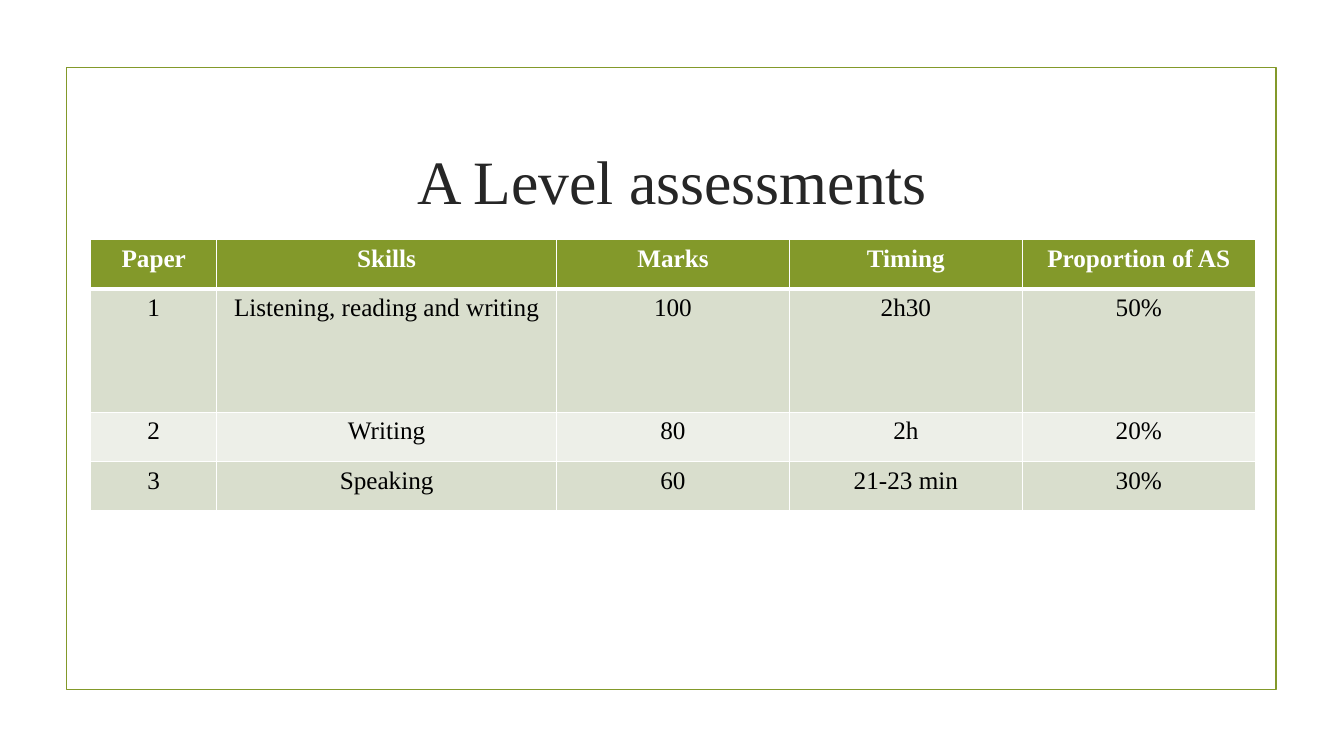
from lxml.etree import SubElement
from pptx import Presentation
from pptx.dml.color import RGBColor
from pptx.enum.shapes import MSO_SHAPE
from pptx.enum.text import MSO_ANCHOR, PP_ALIGN
from pptx.oxml.ns import qn
from pptx.util import Inches, Pt

COLORS = {
    "green": "83992A",
    "sage": "D9DECD",
    "pale": "EDEFE8",
    "white": "FFFFFF",
    "black": "000000",
    "title": "262626",
}
FONT = "Times New Roman"
ROWS = [
    ["Paper", "Skills", "Marks", "Timing", "Proportion of AS"],
    ["1", "Listening, reading and writing", "100", "2h30", "50%"],
    ["2", "Writing", "80", "2h", "20%"],
    ["3", "Speaking", "60", "21-23 min", "30%"],
]
WIDTHS = [1.25, 3.37, 2.31, 2.31, 2.31]
HEIGHTS = [0.49, 1.22, 0.49, 0.49]


def color(name):
    return RGBColor.from_string(COLORS[name])


def write(frame, text, size, ink, bold=False):
    """Put one centred line of text in a frame."""
    frame.text = text
    line = frame.paragraphs[0]
    line.alignment = PP_ALIGN.CENTER
    font = line.runs[0].font
    font.name, font.size, font.bold = FONT, Pt(size), bold
    font.color.rgb = color(ink)


def add_border(cell, side, width):
    edge = SubElement(cell._tc.get_or_add_tcPr(), qn(f"a:ln{side}"), w=str(Pt(width)))
    fill = SubElement(edge, qn("a:solidFill"))
    SubElement(fill, qn("a:srgbClr"), val=COLORS["white"])


def add_frame(slide, left, top, width, height):
    frame = slide.shapes.add_shape(
        MSO_SHAPE.RECTANGLE, Inches(left), Inches(top), Inches(width), Inches(height))
    frame.shadow.inherit = False
    frame.fill.background()
    frame.line.color.rgb = color("green")
    frame.line.width = Pt(1.25)


def add_title(slide, left, top, width, height):
    box = slide.shapes.add_textbox(
        Inches(left), Inches(top), Inches(width), Inches(height))
    frame = box.text_frame
    frame.word_wrap = True
    frame.vertical_anchor = MSO_ANCHOR.MIDDLE
    write(frame, "A Level assessments", 44, "title")


def add_grid(slide, left, top):
    """Draw the table of papers, with a thick rule under its header."""
    table = slide.shapes.add_table(
        len(ROWS), len(WIDTHS), Inches(left), Inches(top),
        Inches(sum(WIDTHS)), Inches(sum(HEIGHTS))).table
    for column, width in zip(table.columns, WIDTHS):
        column.width = Inches(width)
    for row, height in zip(table.rows, HEIGHTS):
        row.height = Inches(height)
    for r, texts in enumerate(ROWS):
        head = r == 0
        shade = "green" if head else "sage" if r % 2 else "pale"
        for c, text in enumerate(texts):
            cell = table.cell(r, c)
            write(cell.text_frame, text, 18, "white" if head else "black", head)
            for side in "LRTB":
                thick = (r, side) in [(0, "B"), (1, "T")]
                add_border(cell, side, 3 if thick else 1)
            cell.fill.solid()
            cell.fill.fore_color.rgb = color(shade)


def main():
    deck = Presentation()
    deck.slide_width, deck.slide_height = Inches(13.33), Inches(7.5)
    slide = deck.slides.add_slide(deck.slide_layouts[6])
    add_frame(slide, 0.66, 0.67, 12, 6.17)
    add_title(slide, 1.42, 1.07, 10.5, 1.43)
    add_grid(slide, 0.9, 2.38)
    deck.save("out.pptx")


if __name__ == "__main__":
    main()
